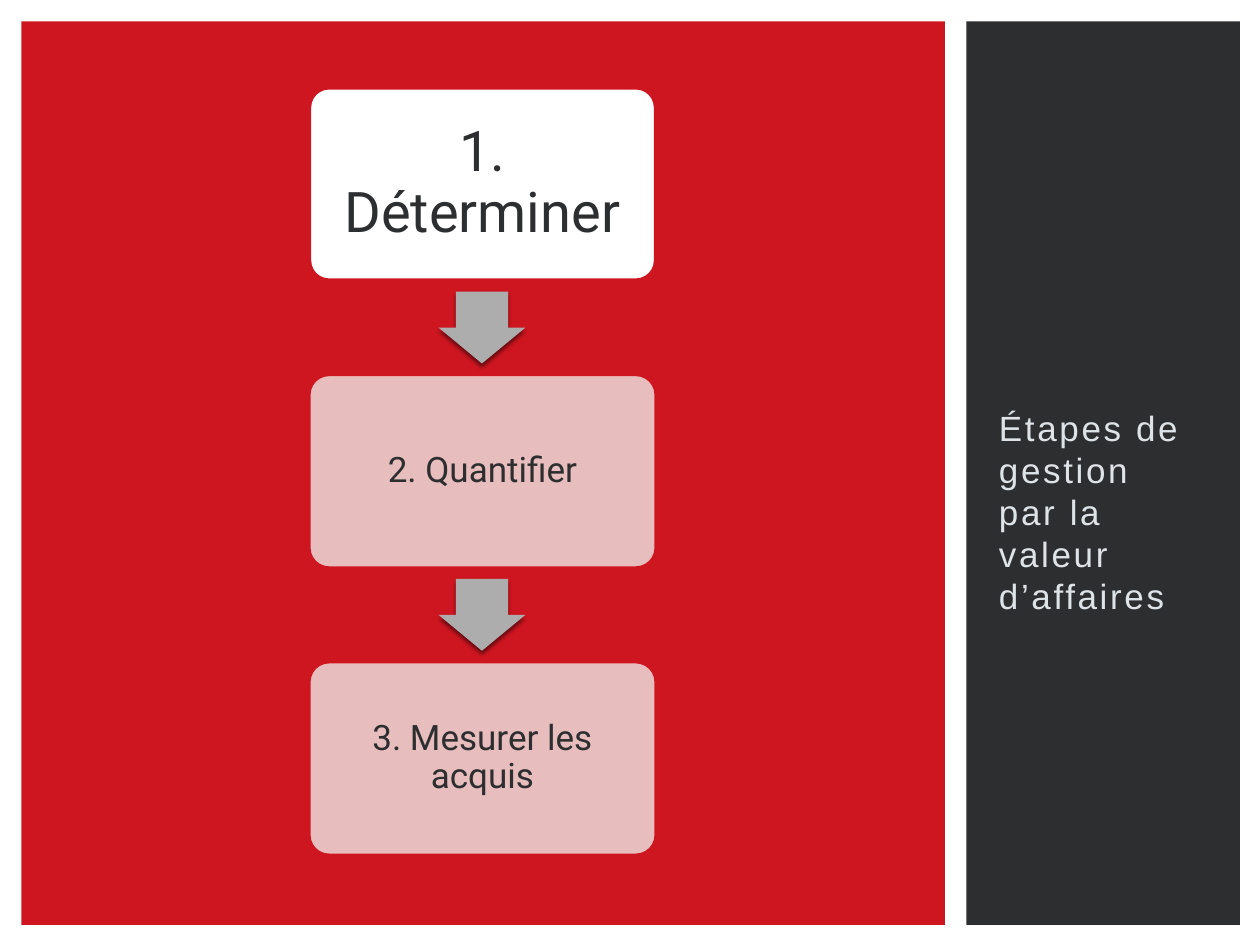
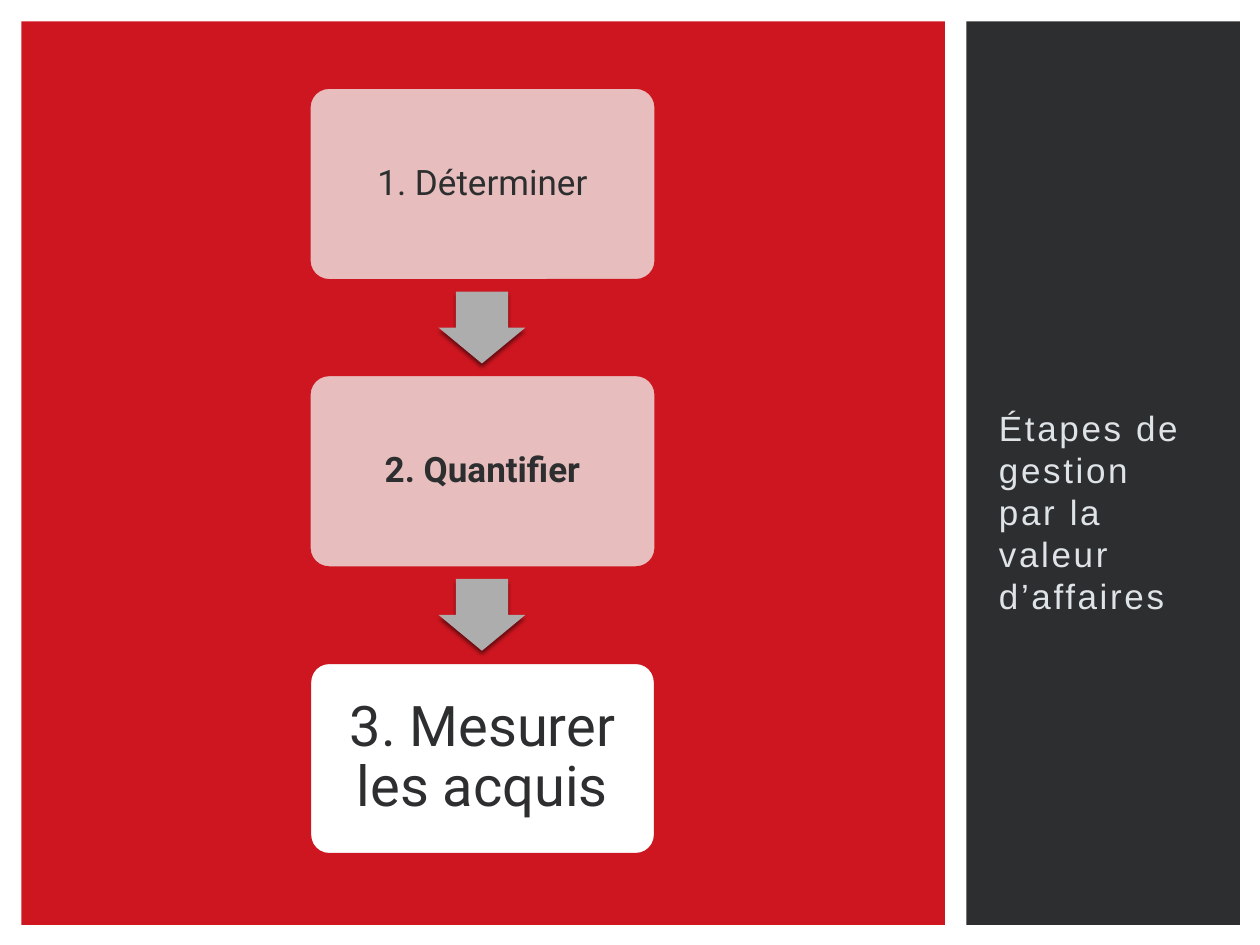
from lxml import etree
from pptx import Presentation
from pptx.dml.color import RGBColor
from pptx.enum.shapes import MSO_SHAPE
from pptx.enum.text import MSO_ANCHOR, PP_ALIGN
from pptx.oxml import parse_xml
from pptx.oxml.ns import nsdecls
from pptx.util import Inches, Pt

RECT = MSO_SHAPE.RECTANGLE
ROUNDED = MSO_SHAPE.ROUNDED_RECTANGLE
DOWN_ARROW = MSO_SHAPE.DOWN_ARROW
MIDDLE = MSO_ANCHOR.MIDDLE
CENTER = PP_ALIGN.CENTER

RED = RGBColor(0xCE, 0x16, 0x20)
DARK = RGBColor(0x2D, 0x2E, 0x2F)
PALE = RGBColor(0xDE, 0xE3, 0xE7)
PINK = RGBColor(0xE8, 0xBD, 0xBD)
GREY = RGBColor(0xAD, 0xAD, 0xAD)
WHITE = RGBColor(0xFF, 0xFF, 0xFF)

TITLE = "Étapes de gestion par la valeur d’affaires"
STEPS = ["1. Déterminer", "2. Quantifier", "3. Mesurer les acquis"]
# Highlighted step and bold step of each slide
SLIDES = [(0, None), (2, 1)]

BOX_TOP, BOX_H, PITCH = 0.7, 1.52, 2.28
ARROW_H = 0.57

SHADOW = (
    f'<a:effectLst {nsdecls("a")}>'
    f'<a:outerShdw blurRad="{Pt(2.5)}" dist="{Pt(2)}" dir="5400000" rotWithShape="0">'
    '<a:srgbClr val="000000"><a:alpha val="50000"/></a:srgbClr>'
    '</a:outerShdw></a:effectLst>'
)


def add_shape(s, kind, left, top, width, height, color):
    sp = s.shapes.add_shape(kind, Inches(left), Inches(top), Inches(width), Inches(height))
    sp.shadow.inherit = False
    sp.fill.solid()
    sp.fill.fore_color.rgb = color
    sp.line.fill.background()
    return sp


def add_text(sp, text, font, size, color):
    tf = sp.text_frame
    tf.word_wrap = True
    tf.vertical_anchor = MIDDLE
    p = tf.paragraphs[0]
    r = p.add_run()
    r.text = text
    r.font.name = font
    r.font.size = Pt(size)
    r.font.color.rgb = color
    return tf, p, r


prs = Presentation()
prs.slide_width, prs.slide_height = Inches(10), Inches(7.5)

for active, bold in SLIDES:
    s = prs.slides.add_slide(prs.slide_layouts[6])

    # Side band and main panel
    add_shape(s, RECT, 7.67, 0.17, 2.17, 7.17, DARK)
    add_shape(s, RECT, 0.17, 0.17, 7.33, 7.17, RED)

    # Title in the side band
    sp = s.shapes.add_textbox(Inches(7.83), Inches(3.16), Inches(1.75), Inches(1.8))
    tf, p, r = add_text(sp, TITLE, "Arial", 20, PALE)
    r.font._element.set("spc", "150")

    for i, step in enumerate(STEPS):
        top = BOX_TOP + i * PITCH
        on = i == active

        # Step box
        sp = add_shape(s, ROUNDED, 2.46, top, 2.74, BOX_H, WHITE if on else PINK)
        sp.adjustments[0] = 0.1
        sp.line.color.rgb = RED
        sp.line.width = Pt(1.5 if on else 0.79)
        tf, p, r = add_text(sp, step, "Roboto", 32 if on else 20, DARK)
        inset = Inches(0.13 if on else 0.08)
        tf.margin_left = tf.margin_right = tf.margin_top = tf.margin_bottom = inset
        p.alignment = CENTER
        p.line_spacing = 0.9
        if i == bold:
            r.font.bold = True

        # Arrow centred in the gap to the next step
        if i < len(STEPS) - 1:
            arrow_top = top + BOX_H + (PITCH - BOX_H - ARROW_H) / 2
            sp = add_shape(s, DOWN_ARROW, 3.48, arrow_top, 0.69, ARROW_H, GREY)
            sp.adjustments[0] = 0.6
            sp.adjustments[1] = 0.5
            spPr = sp._element.spPr
            spPr.replace(spPr.find("{*}effectLst"), parse_xml(SHADOW))

prs.save("out.pptx")
